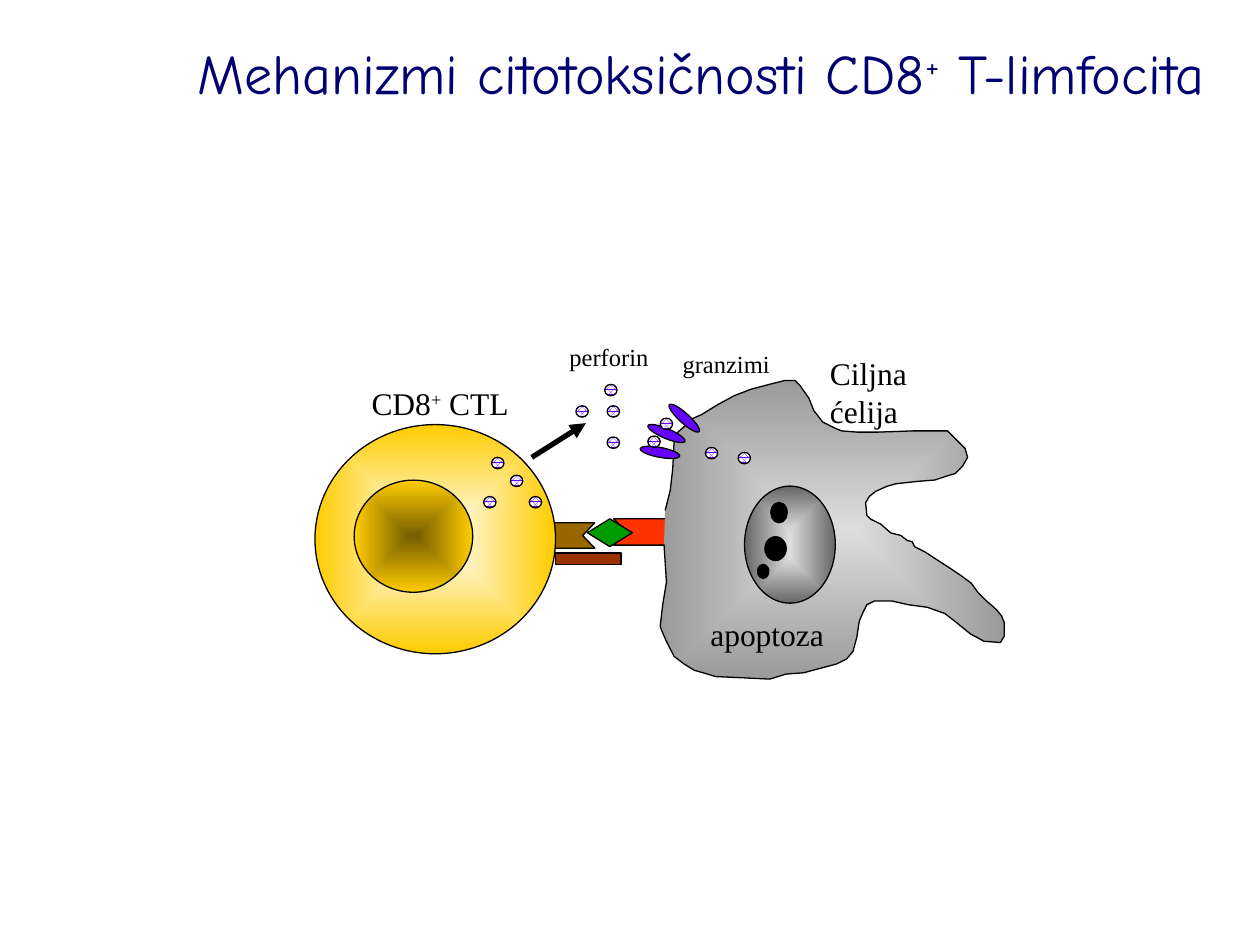
from dataclasses import dataclass

from pptx import Presentation
from pptx.dml.color import RGBColor
from pptx.enum import dml, shapes, text
from pptx.oxml import parse_xml
from pptx.oxml.ns import nsdecls, qn
from pptx.util import Cm, Pt


@dataclass(frozen=True)
class Theme:
    head: str = "Comic Neue"
    body: str = "Times New Roman"
    big: int = 32
    mid: int = 18
    small: int = 14
    thin: float = 0.75
    thick: float = 3
    navy: str = "000072"
    black: str = "000000"
    white: str = "FFFFFF"
    gold: str = "FFCC00"
    umber: str = "765E00"
    pale: str = "DDDDDD"
    gray: str = "9A9A9A"
    dark: str = "666666"
    violet: str = "6600FF"
    brown: str = "996600"
    rust: str = "993300"
    red: str = "FF3300"
    green: str = "009900"


T = Theme()
KIND = shapes.MSO_SHAPE

# Outline of the target cell, in hundredths of an inch
CELL = [
    (528, 405), (532, 389), (534, 372), (535, 351), (538, 343), (545, 337),
    (548, 333), (557, 329), (570, 321), (583, 314), (596, 309), (611, 305),
    (619, 303), (623, 302), (631, 302), (635, 306), (637, 309), (642, 316),
    (646, 326), (653, 335), (663, 340), (668, 342), (680, 343), (697, 343),
    (725, 342), (752, 342), (759, 349), (766, 356), (768, 363), (764, 370),
    (761, 373), (758, 376), (754, 377), (742, 381), (729, 382), (711, 384),
    (704, 386), (695, 390), (690, 394), (687, 399), (688, 409), (691, 412),
    (699, 416), (707, 423), (715, 425), (720, 429), (724, 430), (726, 434),
    (734, 438), (754, 451), (763, 457), (771, 463), (776, 470), (783, 477),
    (791, 484), (795, 489), (797, 494), (797, 505), (794, 510), (781, 509),
    (770, 503), (759, 494), (750, 487), (736, 482), (721, 480), (708, 477),
    (694, 477), (688, 480), (685, 486), (682, 493), (680, 506), (677, 517),
    (672, 523), (664, 527), (649, 531), (638, 534), (624, 535), (611, 539),
    (590, 538), (568, 537), (558, 534), (551, 532), (543, 527), (535, 521),
    (528, 507), (525, 500), (524, 497), (526, 480), (529, 462), (527, 432),
]


def rgb(code):
    return RGBColor.from_string(code)


def paint(shape, color):
    shape.shadow.inherit = False
    shape.fill.solid()
    shape.fill.fore_color.rgb = rgb(color)
    shape.line.color.rgb = rgb(T.black)
    shape.line.width = Pt(T.thin)


def glow(shape, inner, outer, form="shape"):
    """Fill with a gradient that spreads from the centre."""
    fill = shape.fill
    fill.gradient()
    for stop, color in zip(fill.gradient_stops, (inner, outer)):
        stop.color.rgb = rgb(color)
    grad = shape._element.spPr.find(qn("a:gradFill"))
    grad.replace(grad.find(qn("a:lin")), parse_xml(
        f'<a:path {nsdecls("a")} path="{form}">'
        '<a:fillToRect l="50000" t="50000" r="50000" b="50000"/></a:path>'))


def add(slide, kind, box, color, turn=0):
    shape = slide.shapes.add_shape(kind, *map(Cm, box))
    paint(shape, color)
    shape.rotation = turn
    return shape


def orb(slide, box, inner, outer):
    glow(add(slide, KIND.OVAL, box, outer), inner, outer)


def grain(slide, left, top):
    fill = add(slide, KIND.OVAL, (left, top, 0.25, 0.23), T.white).fill
    fill.patterned()
    fill.pattern = dml.MSO_PATTERN.PERCENT_75
    fill.fore_color.rgb = rgb(T.violet)
    fill.back_color.rgb = rgb(T.white)


def target(slide):
    build = slide.shapes.build_freeform(*CELL[0], scale=Cm(2.54) / 100)
    build.add_line_segments(CELL[1:], close=False)
    cell = build.convert_to_shape()
    paint(cell, T.gray)
    glow(cell, T.pale, T.gray, "rect")


def arrow(slide, *ends):
    line = slide.shapes.add_connector(
        shapes.MSO_CONNECTOR.STRAIGHT, *map(Cm, ends))
    line.line.color.rgb = rgb(T.black)
    line.line.width = Pt(T.thick)
    line.line._get_or_add_ln().append(
        parse_xml(f'<a:tailEnd {nsdecls("a")} type="triangle"/>'))
    line._element.spPr.append(parse_xml(f'<a:effectLst {nsdecls("a")}/>'))


def write(frame, words, size, font, color):
    """Write the words; each "+" becomes a superscript."""
    frame.word_wrap = True
    para = frame.paragraphs[0]
    head, plus, tail = words.partition("+")
    for part in filter(None, (head, plus, tail)):
        run = para.add_run()
        run.text = part
        run.font.size = Pt(size)
        run.font.name = font
        run.font.color.rgb = rgb(color)
        if part == "+":
            run.font._element.set("baseline", "30000")
    return para


def label(slide, words, box, size):
    frame = slide.shapes.add_textbox(*map(Cm, box)).text_frame
    write(frame, words, size, T.body, T.black)


def title(slide, words):
    shape = slide.shapes.title
    shape.left, shape.top, shape.width, shape.height = map(
        Cm, (0.84, 0.64, 23.7, 1.63))
    shape.fill.solid()
    shape.fill.fore_color.rgb = rgb(T.white)
    frame = shape.text_frame
    frame.auto_size = text.MSO_AUTO_SIZE.NONE
    frame.vertical_anchor = text.MSO_ANCHOR.MIDDLE
    para = write(frame, words, T.big, T.head, T.navy)
    para.alignment = text.PP_ALIGN.RIGHT


def bridge(slide):
    """Receptors that join the two cells."""
    left = add(slide, KIND.CHEVRON, (10.87, 10.54, 1.12, 0.51), T.brown, 180)
    left.adjustments[0] = 0.48
    add(slide, KIND.RECTANGLE, (11.2, 11.15, 1.32, 0.23), T.rust)
    right = add(slide, KIND.CHEVRON, (12.37, 10.46, 1.35, 0.53), T.red)
    right.adjustments[0] = 0.53
    add(slide, KIND.DIAMOND, (11.84, 10.46, 0.91, 0.56), T.green)


def main():
    deck = Presentation()
    deck.slide_width, deck.slide_height = Cm(25.4), Cm(19.05)
    slide = deck.slides.add_slide(deck.slide_layouts[5])
    title(slide, "Mehanizmi citotoksičnosti CD8+ T-limfocita")

    bridge(slide)
    orb(slide, (6.35, 8.56, 4.85, 4.62), T.white, T.gold)
    orb(slide, (7.14, 9.68, 2.39, 2.26), T.umber, T.gold)
    target(slide)
    orb(slide, (15.01, 9.8, 1.83, 2.36), T.pale, T.dark)
    for spot in ((15.54, 10.13, 0.33, 0.41), (15.27, 11.38, 0.23, 0.28),
                 (15.42, 10.82, 0.43, 0.48)):
        add(slide, KIND.OVAL, spot, T.black)
    for left, top, turn in ((12.9, 9.02, 10.6), (13.39, 8.33, 42.2),
                            (13.03, 8.64, 23)):
        add(slide, KIND.OVAL, (left, top, 0.81, 0.2), T.violet, turn)
    arrow(slide, 10.72, 9.22, 11.81, 8.53)
    for spot in ((14.22, 9.02), (10.29, 9.58), (14.88, 9.12), (10.67, 10.01),
                 (9.91, 9.22), (9.75, 10.01), (13.06, 8.79), (13.31, 8.43),
                 (12.19, 7.75), (12.24, 8.81), (11.61, 8.18), (12.24, 8.18)):
        grain(slide, *spot)

    for words, box, size in (
            ("granzimi", (13.51, 6.91, 2.62, 0.84), T.small),
            ("Ciljna ćelija", (16.48, 7.01, 3.53, 1.78), T.mid),
            ("apoptoza", (14.07, 12.27, 3.81, 1.02), T.mid),
            ("CD8+ CTL", (7.24, 7.62, 3.73, 1.02), T.mid),
            ("perforin", (11.23, 6.78, 2.62, 0.84), T.small)):
        label(slide, words, box, size)
    deck.save("out.pptx")


if __name__ == "__main__":
    main()
